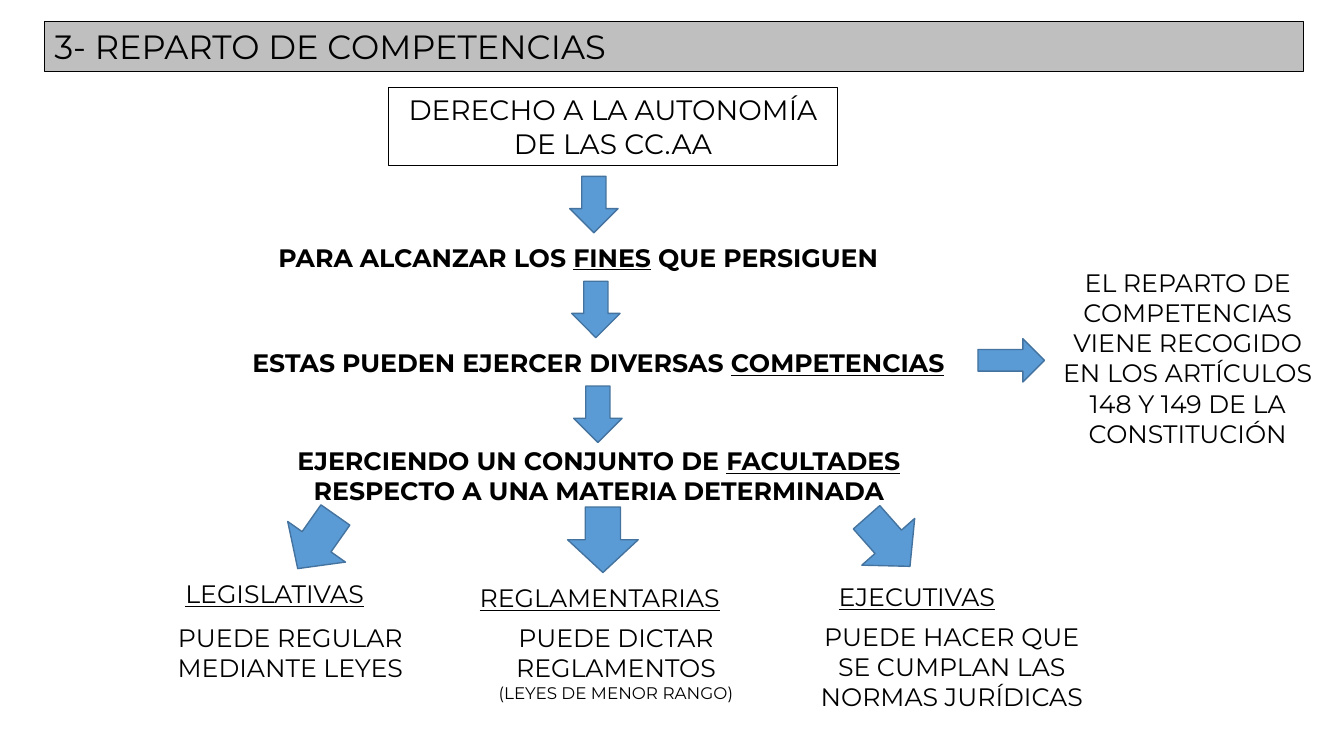
from pptx import Presentation
from pptx.dml.color import RGBColor
from pptx.enum.shapes import MSO_SHAPE as SHAPE
from pptx.enum.text import MSO_ANCHOR as ANCHOR, PP_ALIGN as ALIGN
from pptx.util import Inches, Pt

BLACK = RGBColor(0x00, 0x00, 0x00)
GREY = RGBColor(0xBF, 0xBF, 0xBF)
BLUE = RGBColor(0x5B, 0x9B, 0xD5)
DARK_BLUE = RGBColor(0x43, 0x73, 0x9E)
FONT = "Montserrat"

# Content: words between underscores are underlined; boxes are left, top, width, height
TITLE = ("3- REPARTO DE COMPETENCIAS", (0.44, 0.21, 12.49, 0.5))
RIGHT = ("DERECHO A LA AUTONOMÍA DE LAS CC.AA", (3.85, 0.87, 4.46, 0.77))
STEPS = [
    ("PARA ALCANZAR LOS _FINES_ QUE PERSIGUEN ", (2.46, 2.35, 6.62, 0.4)),
    ("ESTAS PUEDEN EJERCER DIVERSAS _COMPETENCIAS_", (2.05, 3.4, 7.77, 0.4)),
    ("EJERCIENDO UN CONJUNTO DE _FACULTADES_ RESPECTO A UNA MATERIA DETERMINADA",
     (2.25, 4.37, 7.38, 0.71)),
]
SIDE_NOTE = ("EL REPARTO DE COMPETENCIAS VIENE RECOGIDO EN LOS ARTÍCULOS 148 Y 149 "
             "DE LA CONSTITUCIÓN", (10.36, 2.6, 2.84, 2.22))
# Heading, its box, explanation lines (text, size), their box, arrow (left, top, rotation)
POWERS = [
    ("_LEGISLATIVAS_", (1.74, 5.69, 2.21, 0.4),
     [("PUEDE REGULAR MEDIANTE LEYES", 18)], (1.46, 6.12, 2.84, 0.71),
     (2.79, 5.05, 35.1)),
    ("_REGLAMENTARIAS_", (4.66, 5.73, 2.84, 0.4),
     [("PUEDE DICTAR REGLAMENTOS", 18), ("(LEYES DE MENOR RANGO)", 12)],
     (4.69, 6.12, 2.84, 0.91), (5.63, 5.03, 0)),
    ("_EJECUTIVAS_", (8.22, 5.72, 2.21, 0.4),
     [("PUEDE HACER QUE SE CUMPLAN LAS NORMAS JURÍDICAS", 18)],
     (7.91, 6.11, 3.06, 1.01), (8.46, 5.05, 318.5)),
]
STEP_ARROW = (5.65, 1.75, 0.48, 0.56)
STEP_SHIFT = (0.02, 1.04)
POWER_ARROW_SIZE = (0.7, 0.65)
SIDE_ARROW = (9.7, 3.36, 0.66, 0.43)

prs = Presentation()
prs.slide_width, prs.slide_height = Inches(13.33), Inches(7.5)
slide = prs.slides.add_slide(prs.slide_layouts[6])


def write(sp, lines, align=ALIGN.CENTER, bold=False, anchor=ANCHOR.TOP):
    tf = sp.text_frame
    tf.word_wrap = True
    tf.vertical_anchor = anchor
    for i, (text, size) in enumerate(lines):
        p = tf.add_paragraph() if i else tf.paragraphs[0]
        p.alignment = align
        p.font.name, p.font.size = FONT, Pt(size)
        p.font.bold, p.font.color.rgb = bold, BLACK
        for j, part in enumerate(text.split("_")):
            if part:
                r = p.add_run()
                r.text = part
                if j % 2:
                    r.font.underline = True


def add_text(lines, box, **style):
    write(slide.shapes.add_textbox(*map(Inches, box)), lines, **style)


def add_shape(kind, box, fill, line, width, rotation=0):
    sp = slide.shapes.add_shape(kind, *map(Inches, box))
    sp.shadow.inherit = False
    if fill is None:
        sp.fill.background()
    else:
        sp.fill.solid()
        sp.fill.fore_color.rgb = fill
    sp.line.color.rgb, sp.line.width = line, Pt(width)
    sp.rotation = rotation
    return sp


def add_arrow(box, kind=SHAPE.DOWN_ARROW, rotation=0):
    add_shape(kind, box, BLUE, DARK_BLUE, 1, rotation)


# Title bar and starting box
for (text, box), fill, size, align in ((TITLE, GREY, 24, ALIGN.LEFT),
                                       (RIGHT, None, 20, ALIGN.CENTER)):
    sp = add_shape(SHAPE.RECTANGLE, box, fill, BLACK, 0.75)
    write(sp, [(text, size)], align, anchor=ANCHOR.MIDDLE)

# Chain of steps, each below its arrow
for i, (text, box) in enumerate(STEPS):
    left, top, width, height = STEP_ARROW
    add_arrow((left + i * STEP_SHIFT[0], top + i * STEP_SHIFT[1], width, height))
    add_text([(text, 18)], box, bold=True)

# Three kinds of powers
for heading, heading_box, lines, lines_box, (left, top, rotation) in POWERS:
    add_arrow((left, top, *POWER_ARROW_SIZE), rotation=rotation)
    add_text([(heading, 18)], heading_box, align=ALIGN.LEFT)
    add_text(lines, lines_box)

# Side note
add_arrow(SIDE_ARROW, SHAPE.RIGHT_ARROW)
add_text([(SIDE_NOTE[0], 18)], SIDE_NOTE[1])

prs.save("out.pptx")
